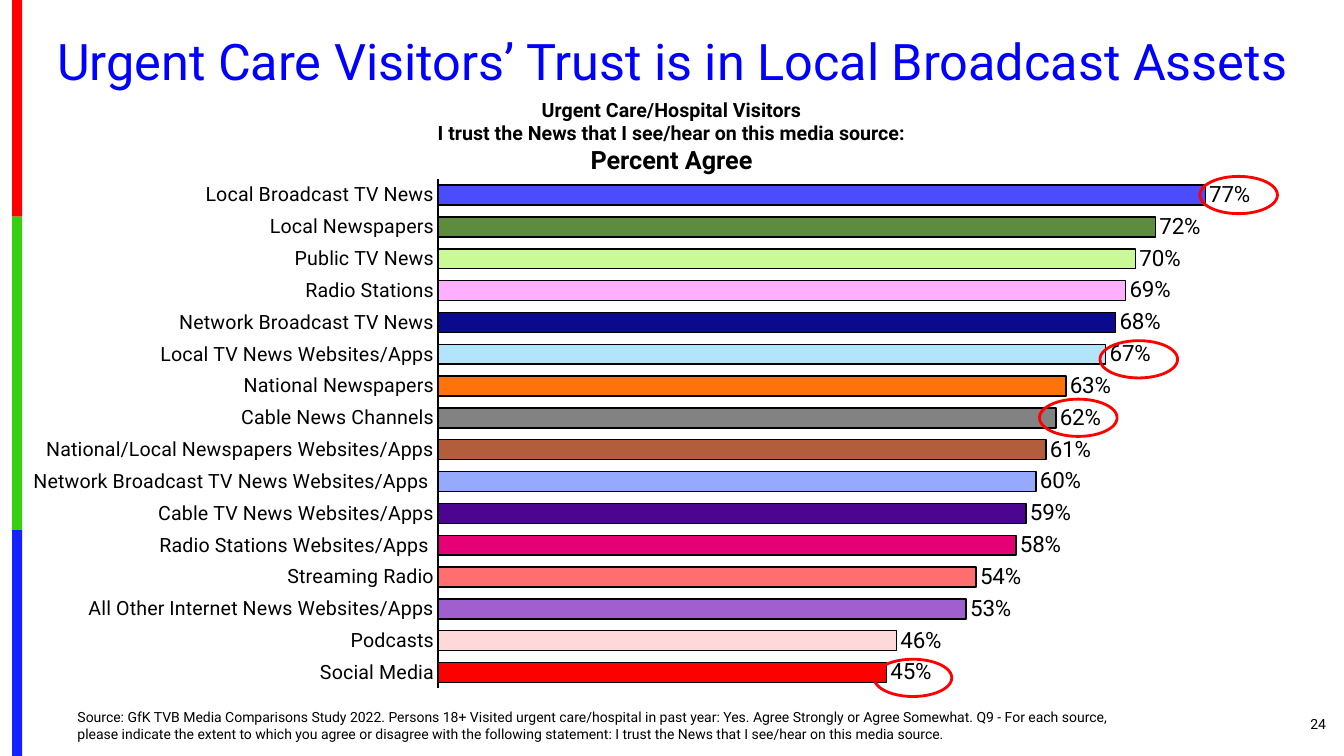
from lxml import etree
from pptx import Presentation
from pptx.chart.data import CategoryChartData
from pptx.dml.color import RGBColor
from pptx.enum.chart import XL_CHART_TYPE, XL_LABEL_POSITION, XL_TICK_MARK
from pptx.enum.shapes import MSO_SHAPE
from pptx.enum.text import MSO_ANCHOR, PP_ALIGN
from pptx.oxml.ns import qn
from pptx.util import Inches, Pt

BAR_CLUSTERED = XL_CHART_TYPE.BAR_CLUSTERED
OUTSIDE_END = XL_LABEL_POSITION.OUTSIDE_END
NO_TICKS = XL_TICK_MARK.NONE
RECTANGLE, OVAL = MSO_SHAPE.RECTANGLE, MSO_SHAPE.OVAL
TOP, MIDDLE = MSO_ANCHOR.TOP, MSO_ANCHOR.MIDDLE
LEFT, CENTER, RIGHT = PP_ALIGN.LEFT, PP_ALIGN.CENTER, PP_ALIGN.RIGHT

# Content
FONT = "Roboto"
BLACK = "000000"
TITLE = "Urgent Care Visitors’ Trust is in Local Broadcast Assets"
HEADING = [  # text, size
    ("Urgent Care/Hospital Visitors", 14),
    ("I trust the News that I see/hear on this media source:", 14),
    ("Percent Agree", 18),
]
SOURCE = (
    "Source: GfK TVB Media Comparisons Study 2022. Persons 18+ Visited urgent "
    "care/hospital in past year: Yes. Agree Strongly or Agree Somewhat. Q9 - For "
    "each source, please indicate the extent to which you agree or disagree with "
    "the following statement: I trust the News that I see/hear on this media source."
)
PAGE_NUMBER = "24"
MEDIA = [  # source, share who agree, bar colour
    ("Local Broadcast TV News", 0.77, "4C4CFF"),
    ("Local Newspapers", 0.72, "5C8C3C"),
    ("Public TV News", 0.70, "CAFA96"),
    ("Radio Stations", 0.69, "FFAFFF"),
    ("Network Broadcast TV News", 0.68, "0A0A8D"),
    ("Local TV News Websites/Apps", 0.67, "B2E5FC"),
    ("National Newspapers", 0.63, "FF730A"),
    ("Cable News Channels", 0.62, "828282"),
    ("National/Local Newspapers Websites/Apps", 0.61, "B25E3C"),
    ("Network Broadcast TV News Websites/Apps ", 0.60, "95A9FD"),
    ("Cable TV News Websites/Apps", 0.59, "4B0590"),
    ("Radio Stations Websites/Apps ", 0.58, "E50073"),
    ("Streaming Radio", 0.54, "FF6F6F"),
    ("All Other Internet News Websites/Apps", 0.53, "9F5FCF"),
    ("Podcasts", 0.46, "FFD9D9"),
    ("Social Media", 0.45, "FF0000"),
]
EDGE_STRIPES = [(2.15, "FE0000"), (3.11, "36CF12"), (2.24, "1322FE")]  # height, colour
HIGHLIGHTS = [(11.9, 1.75), (10.91, 3.38), (10.31, 3.96), (8.67, 6.54)]  # left, top
PLOT_AREA = {"x": 0.311, "y": 0.021, "w": 0.689, "h": 0.979}  # shares of the chart


def color(value):
    return RGBColor.from_string(value)


def set_font(font, size, value=BLACK, bold=False):
    font.name, font.size, font.bold = FONT, Pt(size), bold
    font.color.rgb = color(value)


def set_line(line, value, width):
    line.color.rgb = color(value)
    line.width = Pt(width)


def add_plain_shape(kind, left, top, width, height):
    shape = slide.shapes.add_shape(
        kind, Inches(left), Inches(top), Inches(width), Inches(height))
    shape.shadow.inherit = False
    return shape


def write(text_frame, lines, align, anchor=TOP, value=BLACK, bold=False):
    text_frame.word_wrap = True
    text_frame.vertical_anchor = anchor
    text_frame.text = "\n".join(text for text, size in lines)
    for paragraph, (text, size) in zip(text_frame.paragraphs, lines):
        paragraph.alignment = align
        for run in paragraph.runs:
            set_font(run.font, size, value, bold)


def add_text(left, top, width, height, lines, align, **style):
    box = slide.shapes.add_textbox(
        Inches(left), Inches(top), Inches(width), Inches(height))
    write(box.text_frame, lines, align, **style)


def place_plot(chart):
    plot_area = chart._chartSpace.chart.plotArea
    for old_layout in plot_area.findall(qn("c:layout")):
        plot_area.remove(old_layout)
    layout = etree.Element(qn("c:layout"))
    plot_area.insert(0, layout)
    manual = etree.SubElement(layout, qn("c:manualLayout"))
    settings = [("layoutTarget", "inner"), ("xMode", "edge"), ("yMode", "edge")]
    for name, value in settings + list(PLOT_AREA.items()):
        etree.SubElement(manual, qn("c:" + name)).set("val", str(value))


presentation = Presentation()
presentation.slide_width, presentation.slide_height = Inches(13.33), Inches(7.5)
slide = presentation.slides.add_slide(presentation.slide_layouts[5])

# Stripes down the left edge
stripe_top = 0
for stripe_height, fill in EDGE_STRIPES:
    stripe = add_plain_shape(RECTANGLE, 0.12, stripe_top, 0.1, stripe_height)
    stripe.fill.solid()
    stripe.fill.fore_color.rgb = color(fill)
    stripe.line.fill.background()
    stripe_top += stripe_height

# Title, heading, source and page number
title = slide.shapes.title
title.left, title.top = Inches(0.46), Inches(0.31)
title.width, title.height = Inches(12.42), Inches(0.65)
write(title.text_frame, [(TITLE, 36)], CENTER, anchor=MIDDLE, value="0000FF")
title.text_frame.paragraphs[0].line_spacing = 0.9
add_text(10.25, 6.98, 3, 0.4, [(PAGE_NUMBER, 10)], RIGHT, anchor=MIDDLE)
add_text(0.67, 6.98, 10.42, 0.44, [(SOURCE, 10)], LEFT)
add_text(1.87, 0.92, 9.58, 0.88, HEADING, CENTER, bold=True)

# Bar chart
chart_data = CategoryChartData(number_format="0%")
chart_data.categories = [name for name, share, fill in MEDIA]
chart_data.add_series("Series 1", [share for name, share, fill in MEDIA])
chart = slide.shapes.add_chart(
    BAR_CLUSTERED, Inches(0.33), Inches(1.67), Inches(12.91), Inches(5.17),
    chart_data).chart
chart.has_legend = chart.has_title = False
set_font(chart.font, 10)
place_plot(chart)

category_axis = chart.category_axis
category_axis.reverse_order = True
category_axis.major_tick_mark = category_axis.minor_tick_mark = NO_TICKS
set_font(category_axis.tick_labels.font, 14)
set_line(category_axis.format.line, BLACK, 1.5)

value_axis = chart.value_axis
value_axis.minimum_scale, value_axis.maximum_scale = 0, 0.9
value_axis.has_major_gridlines = False
value_axis.visible = False

plot = chart.plots[0]
plot.gap_width = 60
plot.vary_by_categories = False
series = plot.series[0]
for index, (name, share, fill) in enumerate(MEDIA):
    bar = series.points[index].format
    bar.fill.solid()
    bar.fill.fore_color.rgb = color(fill)
    set_line(bar.line, BLACK, 1)

labels = series.data_labels
labels.show_value = True
labels.number_format, labels.number_format_is_linked = "0%", False
labels.position = OUTSIDE_END
set_font(labels.font, 16)

# Rings around the highlighted values
for left, top in HIGHLIGHTS:
    ring = add_plain_shape(OVAL, left, top, 0.77, 0.37)
    ring.fill.background()
    set_line(ring.line, "FF0000", 2)

presentation.save("out.pptx")
